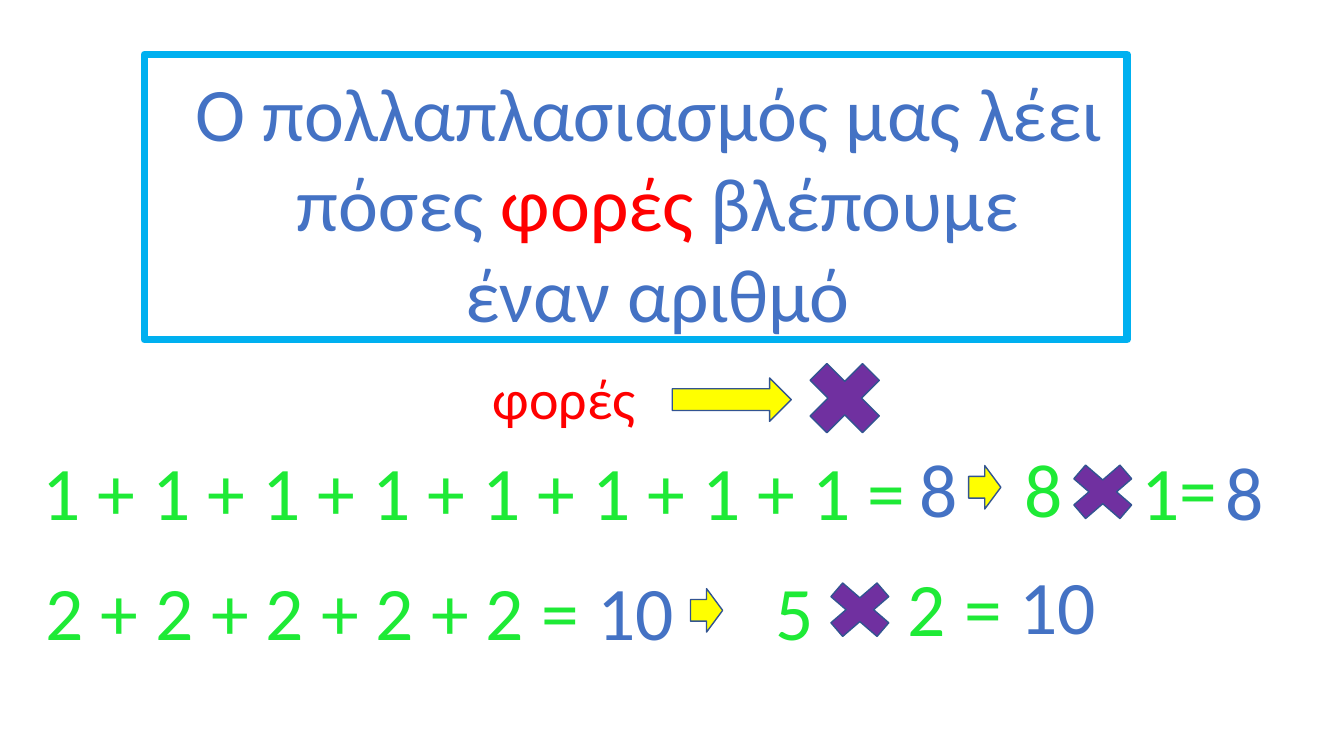
from pptx import Presentation
from pptx.dml.color import RGBColor
from pptx.enum.shapes import MSO_SHAPE as Shape
from pptx.enum.text import MSO_ANCHOR as Anchor, MSO_AUTO_SIZE as AutoSize, PP_ALIGN as Align
from pptx.util import Pt

COLORS = {
    "blue": "4472C4", "red": "FF0000", "green": "1EEA36", "yellow": "FFFF00",
    "purple": "7030A0", "frame": "00B0F0", "outline": "325491",
}


def color_of(name):
    return RGBColor.from_string(COLORS[name])


def write(paragraph, text, *, color, size=54, align=Align.CENTER):
    paragraph.alignment = align
    run = paragraph.add_run()
    run.text = text
    run.font.name = "Calibri"
    run.font.size = Pt(size)
    run.font.color.rgb = color_of(color)


lesson = Presentation()
lesson.slide_width, lesson.slide_height = Pt(960), Pt(540)
slide = lesson.slides.add_slide(lesson.slide_layouts[5])

# Definition of multiplication
definition = slide.shapes.title
definition.left, definition.top = Pt(128.9), Pt(43.2)
definition.width, definition.height = Pt(681.8), Pt(203.8)
definition_frame = definition.text_frame
definition_frame.auto_size = AutoSize.NONE
definition_frame.word_wrap = False
definition_frame.vertical_anchor = Anchor.TOP
definition_lines = [
    [("Ο πολλαπλασιασμός μας λέει ", "blue")],
    [("πόσες ", "blue"), ("φορές", "red"), (" βλέπουμε", "blue")],
    [("έναν αριθμό", "blue")],
]
for number, line in enumerate(definition_lines):
    paragraph = definition_frame.add_paragraph() if number else definition_frame.paragraphs[0]
    paragraph.line_spacing = 1.0
    paragraph.space_before = Pt(0)
    for words, color in line:
        write(paragraph, words, color=color)

# Frame, arrows and multiplication signs: kind, left, top, width, height, fill
symbols = [
    (Shape.RECTANGLE, 103, 38.9, 702, 203.8, None),
    (Shape.RIGHT_ARROW, 480.2, 270, 85, 31, "yellow"),
    (Shape.MATH_MULTIPLY, 567.4, 248.4, 72, 72, "purple"),
    (Shape.RIGHT_ARROW, 691.9, 332.6, 23, 31, "yellow"),
    (Shape.MATH_MULTIPLY, 756, 324, 63.4, 54.7, "purple"),
    (Shape.RIGHT_ARROW, 493.2, 420.5, 23, 31, "yellow"),
    (Shape.MATH_MULTIPLY, 582.5, 408.2, 63.4, 54.7, "purple"),
]
for kind, left, top, width, height, fill in symbols:
    symbol = slide.shapes.add_shape(kind, Pt(left), Pt(top), Pt(width), Pt(height))
    symbol.shadow.inherit = False
    if fill:
        symbol.fill.solid()
        symbol.fill.fore_color.rgb = color_of(fill)
    else:
        symbol.fill.background()
    symbol.line.color.rgb = color_of("outline" if fill else "frame")
    symbol.line.width = Pt(1 if fill else 5.25)

# The word for the sign
times_box = slide.shapes.add_textbox(Pt(344.9), Pt(256.3), Pt(147.6), Pt(55.4))
times_box.text_frame.word_wrap = True
write(times_box.text_frame.paragraphs[0], "φορές", color="red", size=40, align=Align.LEFT)

# Sums and products: text, left, top, width, color
terms = [
    (" + ".join("1" * 8) + " = ", 19.4, 313.9, 650.9, "green"),
    ("8", 649.4, 311.8, 42.5, "blue"),
    ("8", 724.3, 311.8, 42.5, "green"),
    ("1", 807.8, 313.9, 42.5, "green"),
    ("=", 835.2, 311.8, 41.8, "green"),
    ("8", 867.6, 314.6, 42.5, "blue"),
    (" + ".join("2" * 5) + " =", 10.1, 399.6, 426.2, "green"),
    ("10", 419, 399.6, 69.8, "blue"),
    ("5", 546.5, 399.6, 42.5, "green"),
    ("2", 640.8, 397.4, 42.5, "green"),
    ("=", 681.8, 397.4, 41.8, "green"),
    ("10", 720.7, 396, 69.8, "blue"),
]
for text, left, top, width, color in terms:
    term = slide.shapes.add_textbox(Pt(left), Pt(top), Pt(width), Pt(72.7))
    term.text_frame.word_wrap = False
    write(term.text_frame.paragraphs[0], text, color=color)

lesson.save("out.pptx")
